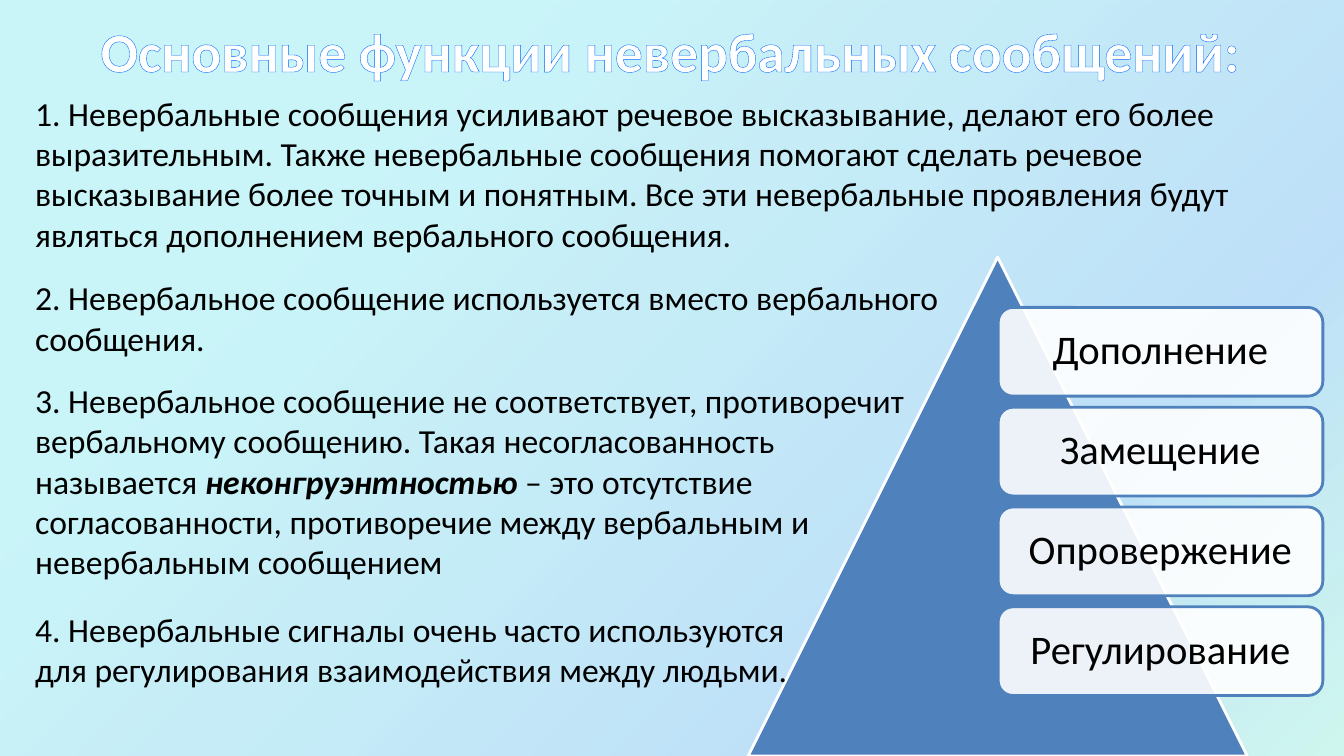
import pptx
import pptx.dml.color
import pptx.enum.shapes
import pptx.enum.text
import pptx.oxml
import pptx.oxml.ns
import pptx.util

PX = 9144  # 100 px to the inch
SHAPES = pptx.enum.shapes.MSO_SHAPE
ANCHOR = pptx.enum.text.MSO_ANCHOR
ALIGN = pptx.enum.text.PP_ALIGN
AUTO_SIZE = pptx.enum.text.MSO_AUTO_SIZE
NSDECLS = pptx.oxml.ns.nsdecls("a")
rgb = pptx.dml.color.RGBColor.from_string


def add_shape(kind, left, top, width, height, fill=None, line=None):
    """Add a shadowless shape, given in px, with optional fill and 2 pt line."""
    shape = slide.shapes.add_shape(kind, left * PX, top * PX, width * PX, height * PX)
    shape.shadow.inherit = False
    if fill:
        shape.fill.solid()
        shape.fill.fore_color.rgb = rgb(fill)
    if line:
        shape.line.color.rgb = rgb(line)
        shape.line.width = pptx.util.Pt(2)
    else:
        shape.line.fill.background()
    return shape


def add_run(paragraph, text, size, color, **style):
    run = paragraph.add_run()
    run.text = text
    run.font.color.rgb = rgb(color)
    for key, value in dict(name="Calibri", size=pptx.util.Pt(size), **style).items():
        setattr(run.font, key, value)
    return run


deck = pptx.Presentation()
deck.slide_width, deck.slide_height = 1333 * PX, 750 * PX
slide = deck.slides.add_slide(deck.slide_layouts[5])

# Pale diagonal gradient behind everything
backdrop = add_shape(SHAPES.RECTANGLE, 0, 0, 1333, 767)
stops = "".join(
    f'<a:gs pos="{pos}000"><a:srgbClr val="{color}"><a:alpha val="{alpha}000"/></a:srgbClr></a:gs>'
    for pos, color, alpha in [(25, "21D6E0", 23), (75, "0087E6", 25),
                              (100, "03D4A8", 18), (100, "005CBF", 26)]
)
gradient = pptx.oxml.parse_xml(
    f'<a:gradFill {NSDECLS}><a:gsLst>{stops}</a:gsLst><a:lin ang="2700000" scaled="0"/></a:gradFill>'
)
backdrop._element.spPr.prstGeom.addnext(gradient)

# Title with outlined letters
title = slide.shapes.title
title._element.addprevious(backdrop._element)
for key, value in dict(left=65, top=21, width=1200, height=57).items():
    setattr(title, key, value * PX)
for key, value in dict(vertical_anchor=ANCHOR.MIDDLE, word_wrap=True, auto_size=AUTO_SIZE.NONE).items():
    setattr(title.text_frame, key, value)
heading = title.text_frame.paragraphs[0]
heading.alignment = ALIGN.CENTER
heading_run = add_run(heading, "Основные функции невербальных сообщений:", 39.6, "FFFFFF", bold=True)
outline = pptx.oxml.parse_xml(
    f'<a:ln {NSDECLS} w="18415"><a:solidFill><a:srgbClr val="0066FF"/></a:solidFill></a:ln>'
)
heading_run.font._element.insert(0, outline)

# Pyramid with the four functions
add_shape(SHAPES.ISOSCELES_TRIANGLE, 742, 255, 495, 495, "4F81BD", "FFFFFF")
for row, function in enumerate(["Дополнение", "Замещение", "Опровержение", "Регулирование"]):
    card = add_shape(SHAPES.ROUNDED_RECTANGLE, 990, 305 + 99 * row, 322, 88, "FFFFFF", "4F81BD")
    card_color = card._element.spPr.find(".//" + pptx.oxml.ns.qn("a:srgbClr"))
    card_color.append(pptx.oxml.parse_xml(f'<a:alpha {NSDECLS} val="90000"/>'))
    for key, value in dict(margin_left=12 * PX, margin_right=12 * PX, margin_top=12 * PX,
                           margin_bottom=12 * PX, vertical_anchor=ANCHOR.MIDDLE,
                           word_wrap=True).items():
        setattr(card.text_frame, key, value)
    label = card.text_frame.paragraphs[0]
    label.alignment = ALIGN.CENTER
    label.line_spacing = 0.9
    add_run(label, function, 29, "000000")

# Numbered explanations: top, width, height, runs (text, emphasised)
explanations = [
    (87, 1258, 172, [("1. Невербальные сообщения усиливают речевое высказывание, делают его более "
                      "выразительным. Также невербальные сообщения помогают сделать речевое "
                      "высказывание более точным и понятным. Все эти невербальные проявления будут "
                      "являться дополнением вербального сообщения.", False)]),
    (270, 1067, 91, [("2. Невербальное сообщение используется вместо вербального сообщения.", False)]),
    (372, 905, 212, [("3. Невербальное сообщение не соответствует, противоречит вербальному "
                      "сообщению. Такая несогласованность называется ", False),
                     ("неконгруэнтностью ", True),
                     ("– это отсутствие согласованности, противоречие между вербальным и "
                      "невербальным сообщением", False)]),
    (599, 789, 91, [("4. Невербальные сигналы очень часто используются для регулирования "
                     "взаимодействия между людьми.", False)]),
]
for top, width, height, runs in explanations:
    box = slide.shapes.add_textbox(25 * PX, top * PX, width * PX, height * PX)
    box.text_frame.word_wrap = True
    box.text_frame.auto_size = AUTO_SIZE.SHAPE_TO_FIT_TEXT
    for text, emphasised in runs:
        add_run(box.text_frame.paragraphs[0], text, 24, "000000", bold=emphasised, italic=emphasised)

deck.save("out.pptx")
